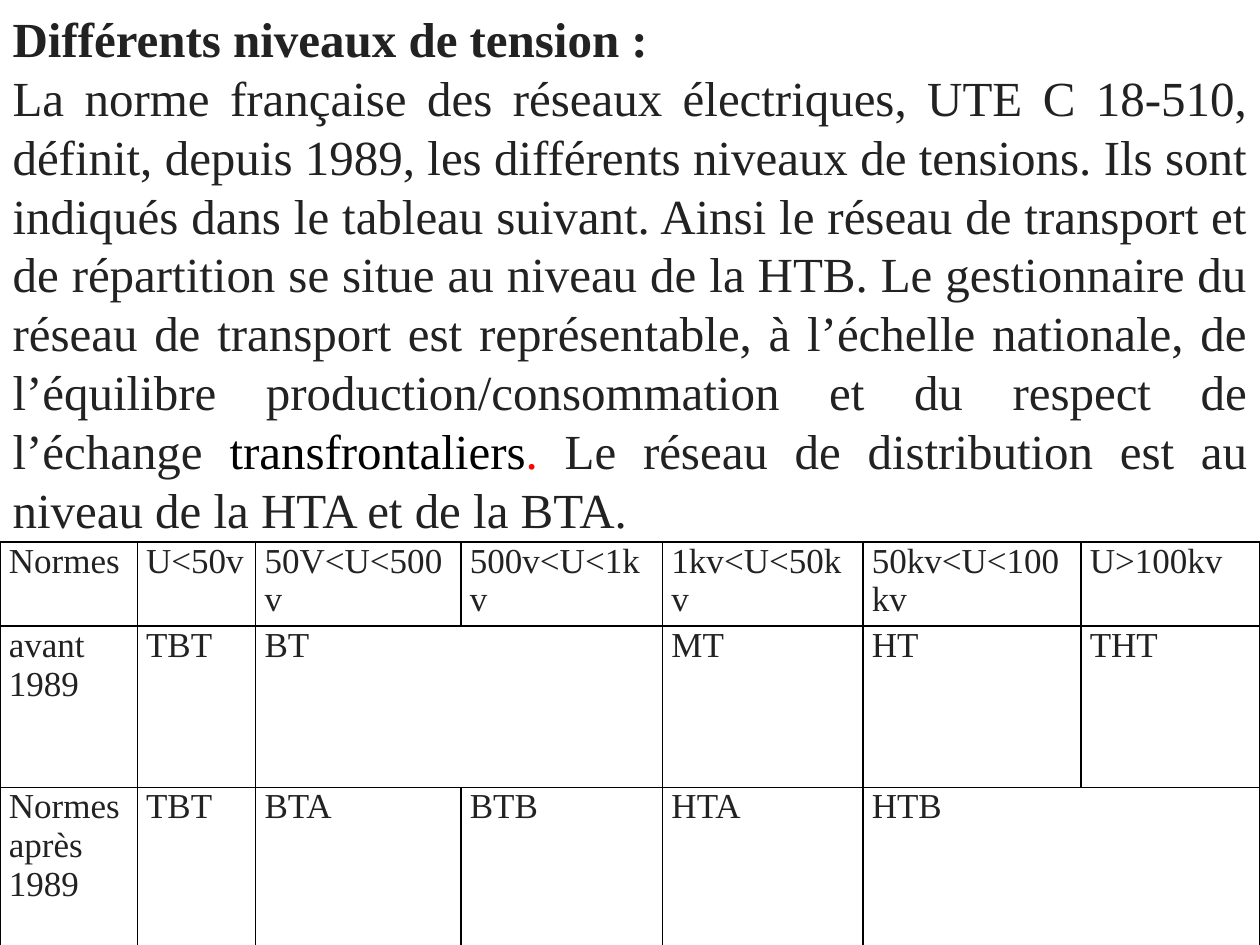
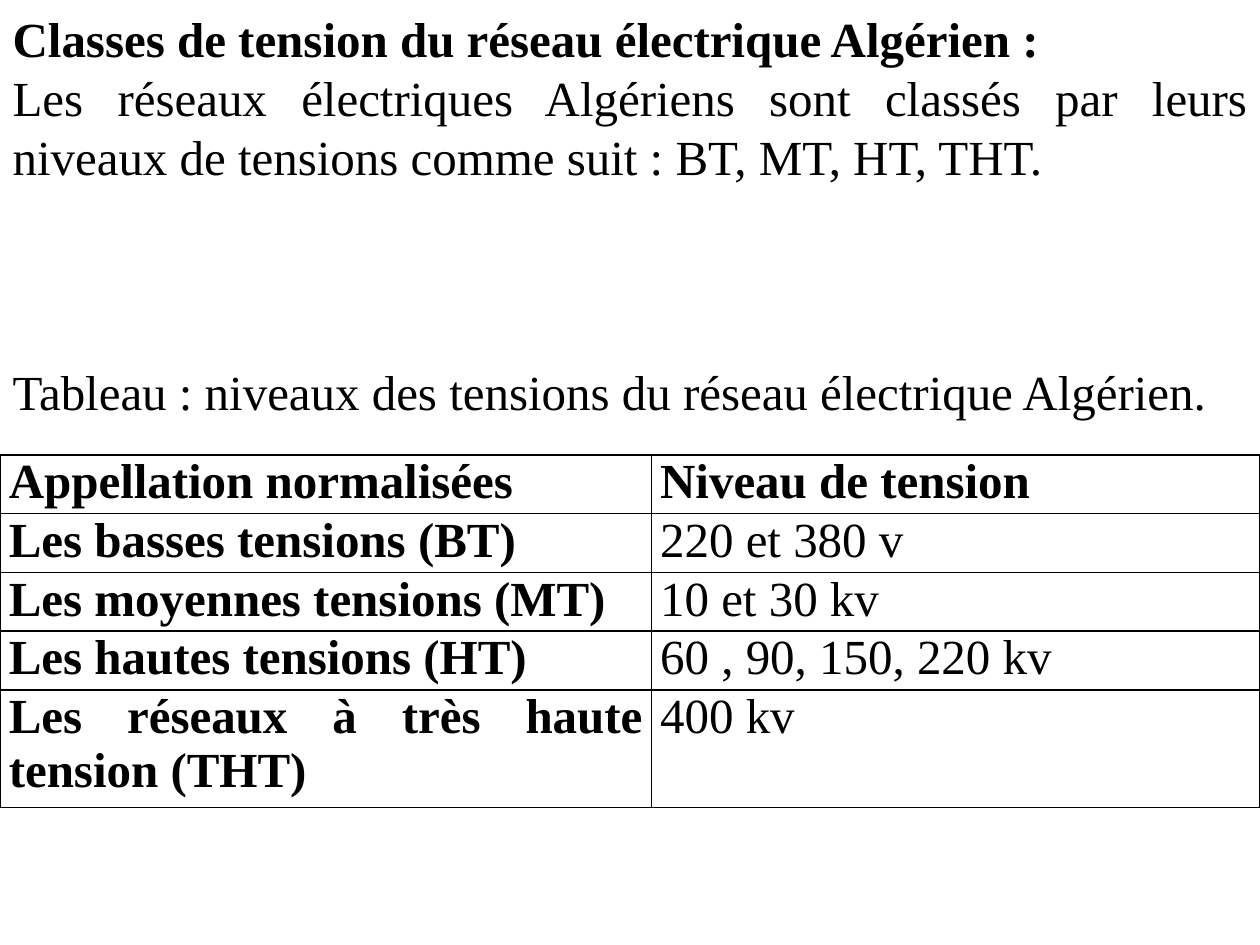
import pptx
import pptx.dml.color
import pptx.enum.text
import pptx.oxml.ns
import pptx.util
from lxml import etree

FONT = "Times New Roman"
INK, BLACK, RED = "222222", "000000", "FF0000"
WIDTH, HEIGHT = 10, 7.5
TEXT_SIZE = 28
LINE = 33.6  # pitch of the running text, in points
TOP, MARGIN, CELL_MARGIN = 0.07, 0.1, 0.07
SPANNED = None  # a cell covered by the one on its left

SLIDES = [
    {
        "ink": INK,
        "title": "Différents niveaux de tension :",
        # each paragraph: empty lines above it, then its (text, colour) runs
        "body": [
            (0, [
                ("La norme française des réseaux électriques, UTE C 18-510, définit, "
                 "depuis 1989, les différents niveaux de tensions. Ils sont indiqués "
                 "dans le tableau suivant. Ainsi le réseau de transport et de "
                 "répartition se situe au niveau de la HTB. Le gestionnaire du réseau "
                 "de transport est représentable, à l’échelle nationale, de "
                 "l’équilibre production/consommation et du respect de l’échange ", INK),
                ("transfrontaliers", BLACK),
                (".", RED),
                (" Le réseau de distribution est au niveau de la HTA et de la BTA.", INK),
            ]),
        ],
        "lines": 8,
        "table": {
            "top": 4.3,
            "size": 20,
            "columns": [1.09, 0.94, 1.63, 1.6, 1.59, 1.73, 1.42],
            "rows": [0.67, 1.28, 1.28],
            "bold_labels": False,
            "cells": [
                ["Normes", "U<50v", "50V<U<500v", "500v<U<1kv", "1kv<U<50kv",
                 "50kv<U<100kv", "U>100kv"],
                ["avant 1989", "TBT", "BT", SPANNED, "MT", "HT", "THT"],
                ["Normes après 1989", "TBT", "BTA", "BTB", "HTA", "HTB", SPANNED],
            ],
        },
    },
    {
        "ink": BLACK,
        "title": "Classes de tension du réseau électrique Algérien :",
        "body": [
            (0, [("Les réseaux électriques Algériens sont classés par leurs niveaux de "
                  "tensions comme suit : BT, MT, HT, THT.", BLACK)]),
            (3, [("Tableau : niveaux des tensions du réseau électrique Algérien.", BLACK)]),
        ],
        "lines": 6,
        "table": {
            "top": 3.61,
            "size": TEXT_SIZE,
            "columns": [5.17, 4.83],
            "rows": [2.8 / 6 * lines for lines in (1, 1, 1, 1, 2)],
            "bold_labels": True,
            "cells": [
                ["Appellation normalisées", "Niveau de tension"],
                ["Les basses tensions (BT)", "220 et 380 v"],
                ["Les moyennes tensions (MT)", "10 et 30 kv"],
                ["Les hautes tensions (HT)", "60 , 90, 150, 220 kv"],
                ["Les réseaux à très haute tension (THT)", "400 kv"],
            ],
        },
    },
]


def inches(value):
    return pptx.util.Inches(value)


def colour(hex_string):
    return pptx.dml.color.RGBColor.from_string(hex_string)


def write(paragraph, runs, size, bold=False):
    """Fill a justified paragraph with (text, colour) runs."""
    paragraph.alignment = pptx.enum.text.PP_ALIGN.JUSTIFY
    for text, ink in runs:
        run = paragraph.add_run()
        run.text = text
        run.font.name = FONT
        run.font.size = pptx.util.Pt(size)
        run.font.bold = bold
        run.font.color.rgb = colour(ink)


def write_lines(paragraph, runs, empty_lines=0, bold=False):
    """Write running text on the common pitch, without bullet or indent."""
    write(paragraph, runs, TEXT_SIZE, bold)
    paragraph.line_spacing = pptx.util.Pt(LINE)
    paragraph.space_before = pptx.util.Pt(LINE * empty_lines)
    paragraph.space_after = pptx.util.Pt(0)
    properties = paragraph._p.get_or_add_pPr()
    properties.set("marL", "0")
    properties.set("indent", "0")
    etree.SubElement(properties, pptx.oxml.ns.qn("a:buNone"))


def place(holder, first_line, lines):
    """Set a placeholder across the slide, on whole lines of text."""
    pitch = LINE / 72
    holder.left, holder.width = 0, inches(WIDTH)
    holder.top = inches(TOP + first_line * pitch)
    holder.height = inches(lines * pitch)
    frame = holder.text_frame
    frame.word_wrap = True
    frame.auto_size = pptx.enum.text.MSO_AUTO_SIZE.NONE
    frame.vertical_anchor = pptx.enum.text.MSO_ANCHOR.TOP
    frame.margin_left = frame.margin_right = inches(MARGIN)
    frame.margin_top = frame.margin_bottom = 0
    return frame


def add_borders(cell):
    properties = cell._tc.get_or_add_tcPr()
    for position, side in enumerate(("lnL", "lnR", "lnT", "lnB")):
        line = etree.Element(pptx.oxml.ns.qn("a:" + side), w=str(pptx.util.Pt(1)))
        fill = etree.SubElement(line, pptx.oxml.ns.qn("a:solidFill"))
        etree.SubElement(fill, pptx.oxml.ns.qn("a:srgbClr"), val=BLACK)
        properties.insert(position, line)


def add_voltage_table(slide, content, ink):
    columns, rows = content["columns"], content["rows"]
    table = slide.shapes.add_table(
        len(rows), len(columns), 0, inches(content["top"]),
        inches(sum(columns)), inches(sum(rows))).table
    table.first_row = table.horz_banding = False
    for column, width in zip(table.columns, columns):
        column.width = inches(width)
    for row, height in zip(table.rows, rows):
        row.height = inches(height)
    for r, labels in enumerate(content["cells"]):
        for c, label in enumerate(labels):
            cell = table.cell(r, c)
            cell.margin_left = cell.margin_right = inches(CELL_MARGIN)
            cell.margin_top = cell.margin_bottom = 0
            cell.fill.background()
            add_borders(cell)
            if label is SPANNED:
                table.cell(r, c - 1).merge(cell)
            else:
                bold = content["bold_labels"] and (r == 0 or c == 0)
                write(cell.text_frame.paragraphs[0], [(label, ink)], content["size"], bold)


def add_slide(deck, content):
    slide = deck.slides.add_slide(deck.slide_layouts[1])
    title = place(slide.shapes.title, 0, 1)
    write_lines(title.paragraphs[0], [(content["title"], content["ink"])], bold=True)
    body = place(slide.placeholders[1], 1, content["lines"])
    for number, (empty_lines, runs) in enumerate(content["body"]):
        paragraph = body.add_paragraph() if number else body.paragraphs[0]
        write_lines(paragraph, runs, empty_lines)
    add_voltage_table(slide, content["table"], content["ink"])


def main():
    deck = pptx.Presentation()
    deck.slide_width, deck.slide_height = inches(WIDTH), inches(HEIGHT)
    for content in SLIDES:
        add_slide(deck, content)
    deck.save("out.pptx")


if __name__ == "__main__":
    main()
